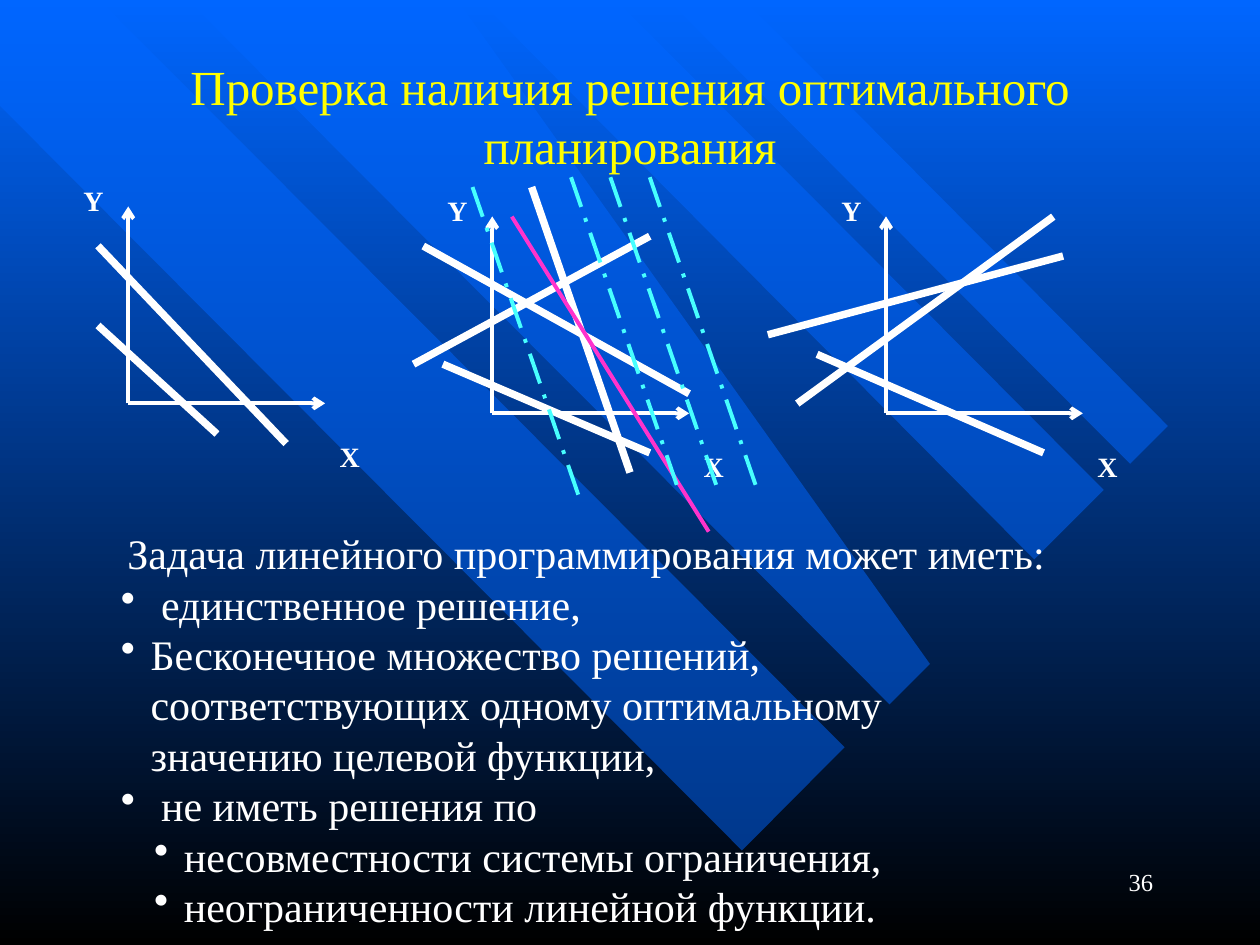
import pptx
import pptx.util
import pptx.dml.color
import pptx.enum.dml
import pptx.enum.shapes
import pptx.enum.text
import pptx.oxml
import pptx.oxml.ns

Pt = pptx.util.Pt
Align = pptx.enum.text.PP_ALIGN
Anchor = pptx.enum.text.MSO_ANCHOR
Dash = pptx.enum.dml.MSO_LINE
qn = pptx.oxml.ns.qn

FONT = "Times New Roman"
WHITE, BLUE, BLACK = "FFFFFF", "0066FF", "000000"
YELLOW, PINK, CYAN = "FFFF00", "FF33CC", "47FFFF"

# Content: lengths in points
TITLE = "Проверка наличия решения оптимального планирования"
LEAD = "Задача линейного программирования может иметь:"
ITEMS = [  # level, text
    (0, " единственное решение,"),
    (0, "Бесконечное множество решений, соответствующих одному оптимальному "
        "значению целевой функции,"),
    (0, " не иметь решения по"),
    (1, "несовместности системы ограничения,"),
    (1, "неограниченности линейной функции."),
]
NUMBER = "36"

BANDS = [
    [(482.6, 427), (56.9, 0), (0, 0), (0, 60.5), (424, 486)],
    [(261.4, 0), (531.4, 379.4), (508.3, 402.5), (107.3, 0)],
    [(625.7, 0), (630.7, 280), (591, 319.7), (273.6, 0)],
    [(381.6, 0), (645.8, 265), (667.4, 243.4), (425.5, 0)],
]
BANDS[2][0] = (352, 0)

PLOTS = [  # origin, constraint lines
    ((73.3, 230.5), [(56, 186, 124, 248), (163.5, 253.5, 56, 140.5)]),
    ((281.3, 236.2), [(371.3, 258.8, 253.1, 208.1), (236.3, 208.1, 371.3, 135),
                      (303.8, 106.9, 360, 270), (241.9, 140.6, 393.8, 225)]),
    ((506.3, 236.2), [(596.3, 258.8, 466.9, 202.5), (455.6, 230.6, 601.9, 123.8),
                      (438.8, 191.3, 607.5, 146.3)]),
]
AXIS = 112.5
LABELS = [("X", AXIS, 17.2), ("Y", -33.8, -129.4)]

AIM = (292.5, 123.8, 405, 303.8)
LEVELS = [(326.3, 101.3), (348.8, 101.3), (371.3, 101.3), (270, 106.9)]
STEP = (61.9, 180)

deck = pptx.Presentation()
deck.slide_width, deck.slide_height = Pt(720), Pt(540)
slide = deck.slides.add_slide(deck.slide_layouts[6])
parts = slide.shapes


def color(code):
    return pptx.dml.color.RGBColor.from_string(code)


def write(text, box=None, frame=None, size=24, hue=WHITE, bold=False,
          align=Align.LEFT, anchor=Anchor.TOP, left=0, hang=0, mark=None):
    """Start a text box, or add a paragraph to a frame."""
    if frame is None:
        frame = parts.add_textbox(*map(Pt, box)).text_frame
        frame.word_wrap = True
        frame.vertical_anchor = anchor
        para = frame.paragraphs[0]
    else:
        para = frame.add_paragraph()
    para.alignment = align
    run = para.add_run()
    run.text = text
    run.font.name, run.font.size, run.font.bold = FONT, Pt(size), bold
    run.font.color.rgb = color(hue)
    if mark:
        props = para._p.get_or_add_pPr()
        props.set("marL", str(Pt(left)))
        props.set("indent", str(-Pt(hang)))
        pptx.oxml.ns  # bullet tag lives in the drawing namespace
        props.append(props.makeelement(qn("a:buChar"), {"char": mark}))
    return frame


def draw(ends, hue=WHITE, width=4.25, dash=None, arrow=False):
    line = parts.add_connector(pptx.enum.shapes.MSO_CONNECTOR.STRAIGHT,
                               *map(Pt, ends))
    line.line.color.rgb = color(hue)
    line.line.width = Pt(width)
    if dash:
        line.line.dash_style = dash
    if arrow:
        stroke = line.line._get_or_add_ln()
        stroke.append(stroke.makeelement(qn("a:tailEnd"), {"type": "arrow"}))
    props = line._element.spPr
    props.append(props.makeelement(qn("a:effectLst"), {}))


# Background gradient, running down
fill = slide.background.fill
fill.gradient()
fill.gradient_angle = 270
for stop, place, hue in zip(fill.gradient_stops, (0, 1), (BLUE, BLACK)):
    stop.color.rgb = color(hue)
    stop.position = place

# Half-transparent diagonal bands
for band in BANDS:
    first, *rest = [(Pt(x), Pt(y)) for x, y in band]
    pen = parts.build_freeform(*first)
    pen.add_line_segments(rest, close=True)
    shape = pen.convert_to_shape()
    shape.shadow.inherit = False
    shape.line.fill.background()
    shape.fill.solid()
    shape.fill.fore_color.rgb = color(BLUE)
    tint = shape._element.spPr.find(".//" + qn("a:srgbClr"))
    tint.append(tint.makeelement(qn("a:alpha"), {"val": "50000"}))

# Title and slide number
write(TITLE, (54, 18, 612, 96), size=28, hue=YELLOW,
      align=Align.CENTER, anchor=Anchor.MIDDLE)
write(NUMBER, (516, 492, 150, 36), size=14, align=Align.RIGHT)

# Plots: axes, labels, constraints
for (x, y), lines in PLOTS:
    draw((x, y, x + AXIS, y), width=2.25, arrow=True)
    draw((x, y, x, y - AXIS), width=2.25, arrow=True)
    for name, dx, dy in LABELS:
        write(name, (x + dx, y + dy, 28, 26.6), size=16, bold=True,
              align=Align.CENTER)
    for ends in lines:
        draw(ends)

# Objective line and its level lines on the middle plot
draw(AIM, hue=PINK, width=2.25)
for x, y in LEVELS:
    draw((x, y, x + STEP[0], y + STEP[1]), hue=CYAN, width=2.25,
         dash=Dash.LONG_DASH_DOT)

# Conclusions
body = write(LEAD, (62, 298, 546, 240), align=Align.CENTER)
for level, text in ITEMS:
    write(text, frame=body, left=17 + 19 * level, hang=17, mark="•")

deck.save("out.pptx")
